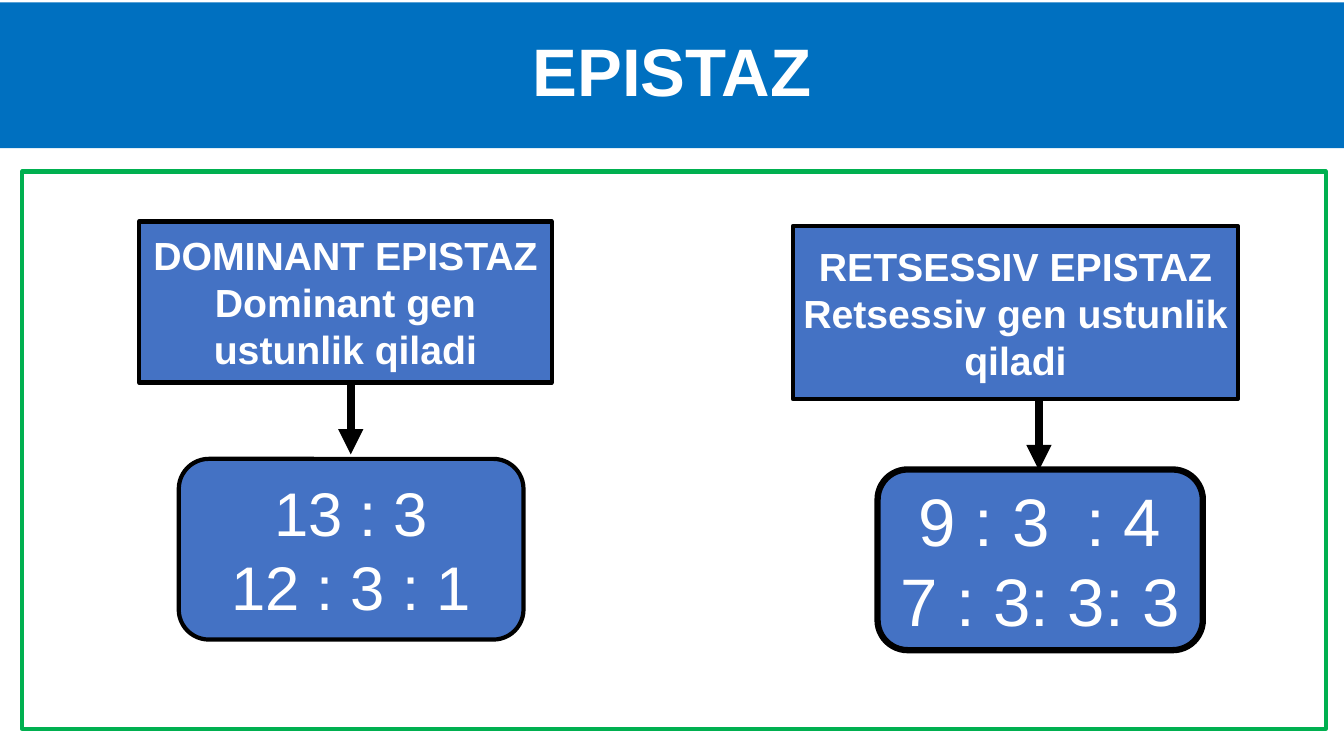
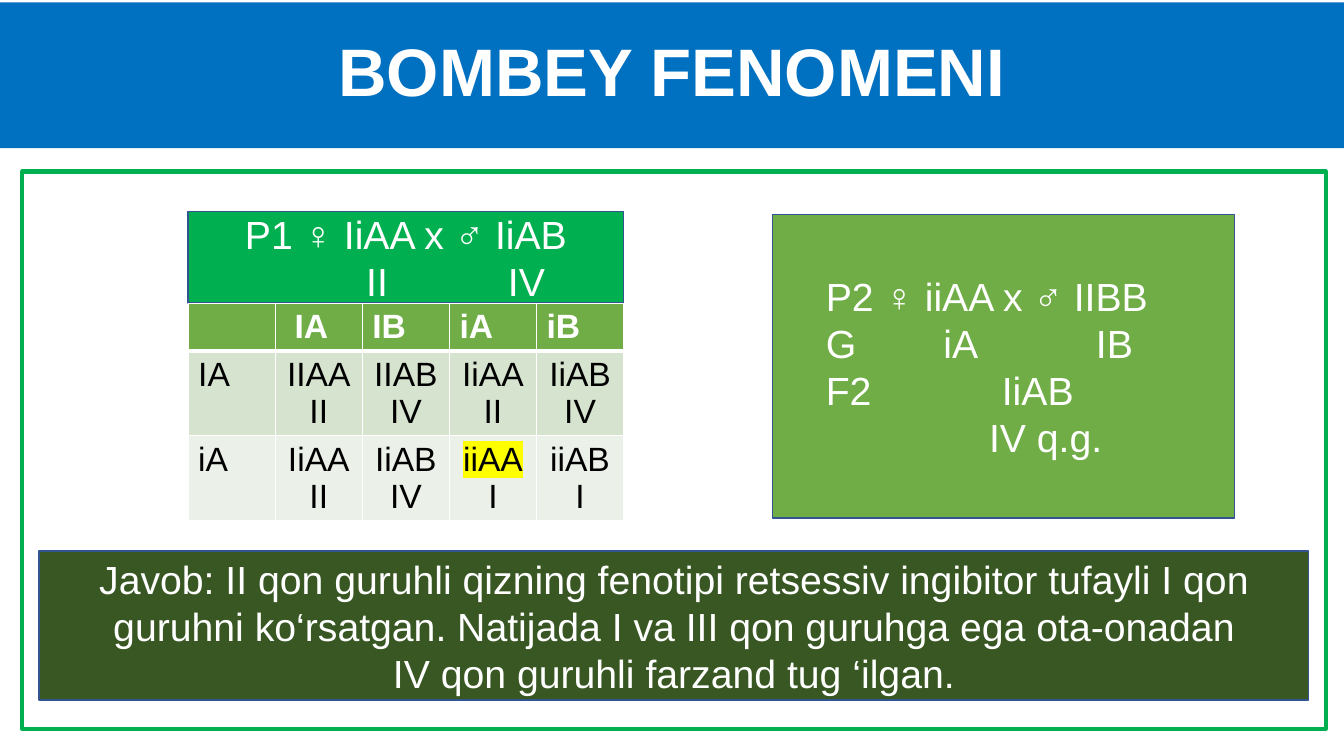
from dataclasses import dataclass
from typing import Optional

from lxml import etree
from pptx import Presentation
from pptx.dml.color import RGBColor
from pptx.enum.shapes import MSO_CONNECTOR, MSO_SHAPE
from pptx.enum.text import MSO_ANCHOR, PP_ALIGN
from pptx.oxml.ns import qn
from pptx.slide import Slide
from pptx.util import Inches, Pt

RECTANGLE = MSO_SHAPE.RECTANGLE
ROUNDED = MSO_SHAPE.ROUNDED_RECTANGLE
STRAIGHT = MSO_CONNECTOR.STRAIGHT
LEFT, CENTER = PP_ALIGN.LEFT, PP_ALIGN.CENTER
MIDDLE = MSO_ANCHOR.MIDDLE

WHITE = RGBColor(0xFF, 0xFF, 0xFF)
BLACK = RGBColor(0x00, 0x00, 0x00)
TITLE_BLUE = RGBColor(0x00, 0x70, 0xC0)
BOX_BLUE = RGBColor(0x44, 0x72, 0xC4)
OUTLINE_BLUE = RGBColor(0x32, 0x54, 0x91)
FRAME_GREEN = RGBColor(0x00, 0xB0, 0x50)
PANEL_GREEN = RGBColor(0x70, 0xAD, 0x47)
ANSWER_GREEN = RGBColor(0x38, 0x57, 0x23)
ROW_GREENS = (RGBColor(0xD5, 0xE3, 0xCF), RGBColor(0xEB, 0xF1, 0xE9))
HIGHLIGHT = RGBColor(0xFF, 0xFF, 0x00)

FONT = "Arial"
WIDTH, HEIGHT = Inches(13.33), Inches(7.5)
TABLE_ROWS = (6.2, 11.1, 11.1)
MARKED_GENOTYPE = "iiAA"
GENOTYPES = (
    ("", " IA", "IB", "iA", "iB"),
    ("IA", "IIAA\nII", "IIAB\nIV", "IiAA\nII", "IiAB\nIV"),
    ("iA", "IiAA\nII", "IiAB\nIV", "iiAA\nI", "iiAB\nI"),
)


@dataclass(frozen=True)
class Area:
    """Shares of the slide's size, in percent."""

    left: float
    top: float
    width: float
    height: float

    @property
    def lengths(self) -> tuple[int, int, int, int]:
        return (across(self.left), down(self.top),
                across(self.width), down(self.height))


@dataclass(frozen=True)
class Line:
    text: str
    align: PP_ALIGN = CENTER
    tabs: tuple[float, ...] = ()


@dataclass(frozen=True)
class Box:
    area: Area
    lines: tuple[Line, ...] = ()
    fill: Optional[RGBColor] = None
    outline: Optional[RGBColor] = None
    weight: float = 1
    size: float = 28
    bold: bool = False
    kind: MSO_SHAPE = RECTANGLE
    spacing: float = 1
    inset: float = 0.75


@dataclass(frozen=True)
class Arrow:
    x: float
    top: float
    length: float = 9.5


def across(share: float) -> int:
    return round(WIDTH * share / 100)


def down(share: float) -> int:
    return round(HEIGHT * share / 100)


def style_paragraph(paragraph, line: Line, size: float, color: RGBColor,
                    bold: bool = False) -> None:
    paragraph.text = line.text
    paragraph.alignment = line.align
    if line.tabs:
        properties = paragraph._p.get_or_add_pPr()
        tab_list = etree.SubElement(properties, qn("a:tabLst"))
        for share in line.tabs:
            etree.SubElement(tab_list, qn("a:tab"),
                             pos=str(across(share)), algn="l")
    font = paragraph.font
    font.name, font.size, font.bold = FONT, Pt(size), bold
    font.color.rgb = color


def fill_text(frame, lines: tuple[Line, ...], size: float, color: RGBColor,
              bold: bool = False, spacing: float = 1) -> None:
    for index, line in enumerate(lines):
        paragraph = frame.add_paragraph() if index else frame.paragraphs[0]
        style_paragraph(paragraph, line, size, color, bold)
        paragraph.line_spacing = spacing


def draw_box(slide: Slide, box: Box) -> None:
    shape = slide.shapes.add_shape(box.kind, *box.area.lengths)
    shape.shadow.inherit = False
    if box.fill is None:
        shape.fill.background()
    else:
        shape.fill.solid()
        shape.fill.fore_color.rgb = box.fill
    if box.outline is None:
        shape.line.fill.background()
    else:
        shape.line.color.rgb = box.outline
        shape.line.width = Pt(box.weight)
    frame = shape.text_frame
    frame.word_wrap = True
    frame.vertical_anchor = MIDDLE
    frame.margin_left = across(box.inset)
    fill_text(frame, box.lines, box.size, WHITE, box.bold, box.spacing)


def draw_arrow(slide: Slide, arrow: Arrow) -> None:
    x = across(arrow.x)
    connector = slide.shapes.add_connector(
        STRAIGHT, x, down(arrow.top), x, down(arrow.top + arrow.length))
    connector.line.color.rgb = BLACK
    connector.line.width = Pt(6)
    properties = connector._element.spPr
    etree.SubElement(properties.find(qn("a:ln")), qn("a:tailEnd"), type="triangle")
    etree.SubElement(properties, qn("a:effectLst"))


def set_borders(cell, bottom: float) -> None:
    properties = cell._tc.get_or_add_tcPr()
    for side, weight in (("L", 1), ("R", 1), ("T", 1), ("B", bottom)):
        border = etree.SubElement(properties, qn(f"a:ln{side}"), w=str(Pt(weight)))
        fill = etree.SubElement(border, qn("a:solidFill"))
        etree.SubElement(fill, qn("a:srgbClr"), val=str(WHITE))


def highlight_run(run) -> None:
    highlight = etree.SubElement(run._r.get_or_add_rPr(), qn("a:highlight"))
    etree.SubElement(highlight, qn("a:srgbClr"), val=str(HIGHLIGHT))


def draw_genotypes(slide: Slide, left: float, top: float, width: float) -> None:
    area = Area(left, top, width, sum(TABLE_ROWS))
    columns = len(GENOTYPES[0])
    table = slide.shapes.add_table(len(GENOTYPES), columns, *area.lengths).table
    for column in table.columns:
        column.width = across(width / columns)
    for row_index, values in enumerate(GENOTYPES):
        header = row_index == 0
        table.rows[row_index].height = down(TABLE_ROWS[row_index])
        for column_index, value in enumerate(values):
            cell = table.cell(row_index, column_index)
            set_borders(cell, 3 if header else 1)
            cell.fill.solid()
            cell.fill.fore_color.rgb = (
                PANEL_GREEN if header else ROW_GREENS[row_index - 1])
            align = LEFT if header or column_index == 0 else CENTER
            lines = tuple(Line(text, align) for text in value.split("\n"))
            fill_text(cell.text_frame, lines, 24, WHITE if header else BLACK, header)
            for paragraph in cell.text_frame.paragraphs:
                if paragraph.text == MARKED_GENOTYPE:
                    highlight_run(paragraph.runs[0])


def add_framed_slide(presentation, title: str) -> Slide:
    slide = presentation.slides.add_slide(presentation.slide_layouts[6])
    draw_box(slide, Box(Area(0, 0.3, 100, 19.3), (Line(title),), TITLE_BLUE,
                        size=48, bold=True, spacing=0.9))
    draw_box(slide, Box(Area(1.65, 22.7, 97, 73.7), outline=FRAME_GREEN, weight=3))
    return slide


def heading_box(area: Area, *texts: str) -> Box:
    return Box(area, tuple(map(Line, texts)), BOX_BLUE, BLACK, 3, bold=True)


def ratio_box(area: Area, weight: float, size: float, *texts: str) -> Box:
    return Box(area, tuple(map(Line, texts)), BOX_BLUE, BLACK, weight, size,
               kind=ROUNDED)


def build_epistasis(presentation) -> None:
    slide = add_framed_slide(presentation, "EPISTAZ")
    for box in (
        heading_box(Area(10.35, 29.3, 30.7, 21.3),
                    "DOMINANT EPISTAZ", "Dominant gen ustunlik qiladi"),
        heading_box(Area(59, 29.9, 33.1, 22.9),
                    "RETSESSIV EPISTAZ", "Retsessiv gen ustunlik qiladi"),
        ratio_box(Area(13.3, 60.7, 25.65, 23.9), 3, 44, "13 : 3", "12 : 3 : 1"),
        ratio_box(Area(65.3, 62.1, 24.2, 23.9), 4.5, 48,
                  "9 : 3  : 4", "7 : 3: 3: 3"),
    ):
        draw_box(slide, box)
    for arrow in (Arrow(26.1, 50.6), Arrow(77.3, 52.7)):
        draw_arrow(slide, arrow)


def build_bombay(presentation) -> None:
    slide = add_framed_slide(presentation, "BOMBEY FENOMENI")
    first_cross = (
        Line("P1 ♀ IiAA x ♂ IiAB"),
        Line("\tII\tIV", LEFT, (12.5, 23.05)),
    )
    second_cross = (
        Line("P2 ♀ iiAA x ♂ IIBB", LEFT),
        Line("G\tiA\tIB", LEFT, (8.75, 20.1)),
        Line("F2\tIiAB", LEFT, (13.1,)),
        Line("\tIV q.g.", LEFT, (12.15,)),
    )
    answer = (
        Line("Javob: II qon guruhli qizning fenotipi retsessiv ingibitor tufayli "
             "I qon guruhni ko‘rsatgan. Natijada I va III qon guruhga ega "
             "ota-onadan"),
        Line("IV qon guruhli farzand tug ‘ilgan."),
    )
    draw_box(slide, Box(Area(14, 28, 32.4, 12.1), first_cross,
                        FRAME_GREEN, OUTLINE_BLUE))
    draw_genotypes(slide, 14, 40.1, 32.4)
    draw_box(slide, Box(Area(57.5, 28.4, 34.35, 40.1), second_cross,
                        PANEL_GREEN, OUTLINE_BLUE, inset=3.95))
    draw_box(slide, Box(Area(2.9, 72.9, 94.45, 19.7), answer,
                        ANSWER_GREEN, OUTLINE_BLUE))


def main() -> None:
    presentation = Presentation()
    presentation.slide_width, presentation.slide_height = WIDTH, HEIGHT
    build_epistasis(presentation)
    build_bombay(presentation)
    presentation.save("out.pptx")


if __name__ == "__main__":
    main()
